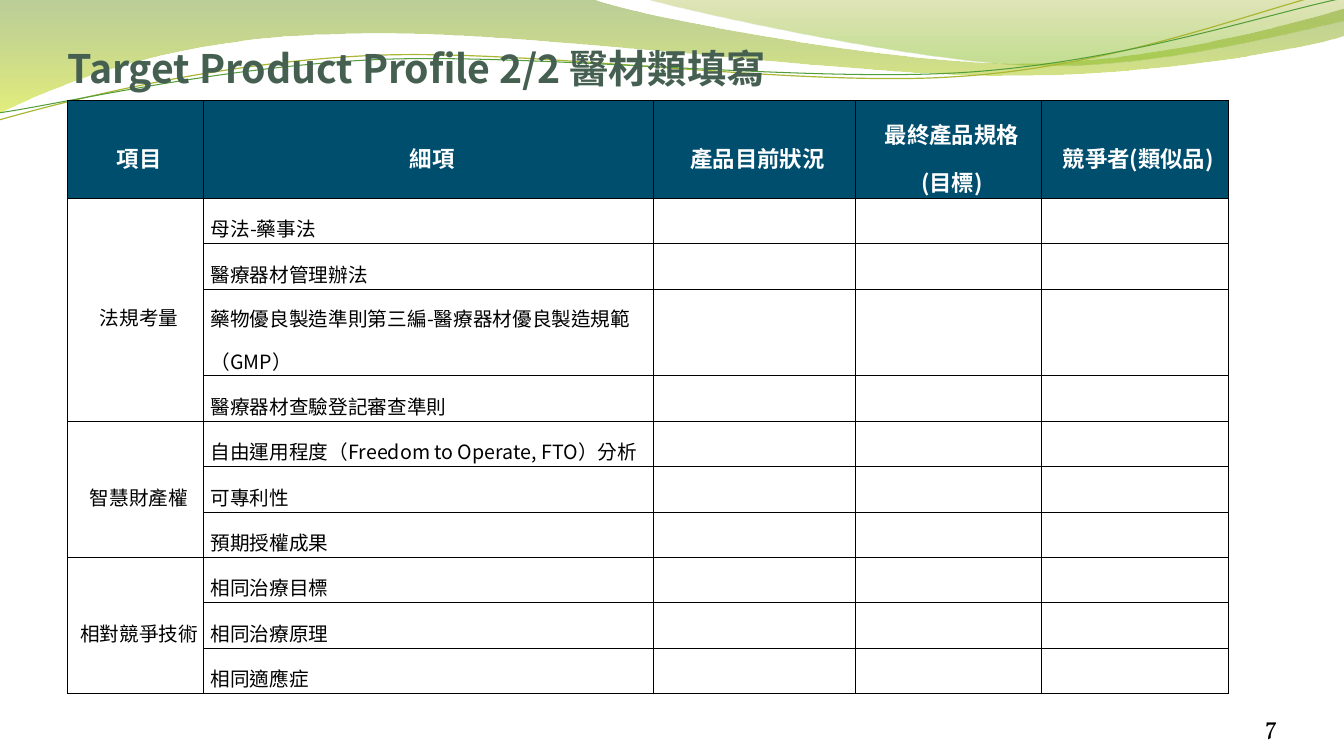
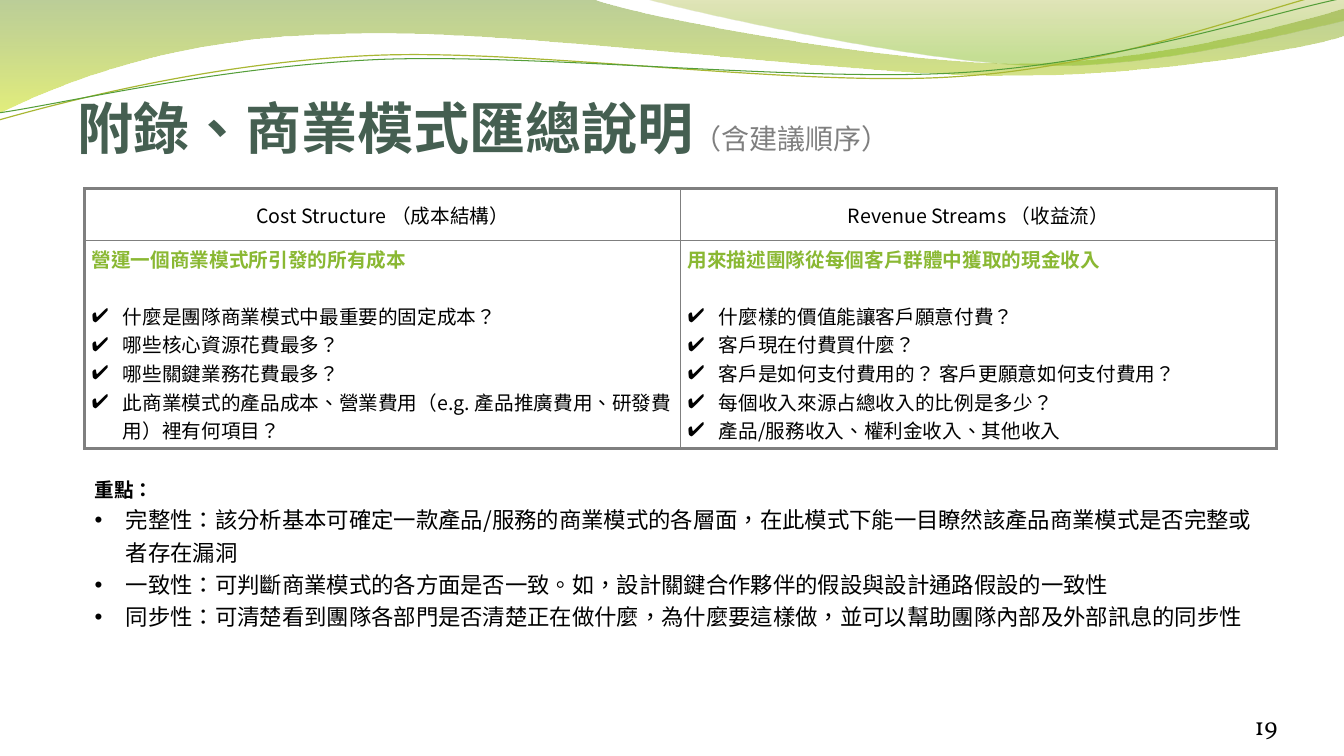
from dataclasses import dataclass

from lxml.etree import SubElement
from pptx import Presentation
from pptx.dml.color import RGBColor
from pptx.enum.text import MSO_ANCHOR, MSO_AUTO_SIZE, PP_ALIGN
from pptx.oxml.ns import qn
from pptx.util import Inches, Pt

TC, SC = "Noto Sans CJK TC", "Noto Sans CJK SC"


@dataclass(frozen=True)
class Theme:
    header: str = "004E6E"
    black: str = "000000"
    gray: str = "7F7F7F"
    styles = {
        "title": (28, SC, "455F51", True),
        "big_tc": (40, TC, "455F51", True),
        "big_sc": (40, SC, "455F51", True),
        "subtitle": (20, SC, "7F7F7F", False),
        "head": (16, TC, "FFFFFF", True),
        "cell": (14, TC, "000000", False),
        "lead": (14, TC, "8AB833", True),
        "label": (14, TC, "000000", True),
        "body": (16, TC, "000000", False),
        "number": (18, "Vollkorn", "000000", False),
    }
    bands = (
        ([(0, 0), (5.87, -0.01), (6.34, 0.17, 8.84, 0.63, 10.11, 0.63),
          (11.37, 0.63, 12.77, 0.26, 13.33, 0.09), (13.34, 0.36),
          (13.11, 0.44, 11.59, 0.76, 9.94, 0.75), (8.29, 0.75, 5.09, 0.28, 3.43, 0.34),
          (1.72, 0.36, 0.61, 0.83, -0.02, 1.13)],
         [(0, "69921C", 45), (1, "CCE10F", 55)]),
        ([(6.38, -0.01), (6.79, 0.11, 9.09, 0.62, 10.25, 0.65),
          (11.4, 0.69, 12.82, 0.32, 13.33, 0.21), (13.33, 0)],
         [(0, "9BAA1A", 30), (0.8, "81BA16", 45)]),
    )
    curves = (
        ([(-0.01, 1.19), (0.63, 1.01, 2.1, 0.62, 3.69, 0.55),
          (5.27, 0.48, 7.89, 0.87, 9.49, 0.76), (11.1, 0.66, 12.51, 0.08, 13.3, -0.1)],
         "A9B733", 0.85),
        ([(-0.01, 1.12), (0.62, 1.03, 2.18, 0.66, 3.77, 0.59),
          (5.37, 0.53, 7.96, 0.82, 9.55, 0.72), (11.14, 0.62, 12.55, 0.14, 13.33, -0.02)],
         "549E39", 0.75),
    )


def assign(obj, values):
    for name, value in values.items():
        setattr(obj, name, value)


def box(left, top, width, height):
    return dict(zip(("left", "top", "width", "height"), map(Inches, (left, top, width, height))))


def insets(left, top, right, bottom):
    names = ("margin_left", "margin_top", "margin_right", "margin_bottom")
    return dict(zip(names, map(Inches, (left, top, right, bottom))))


class Deck:
    """Holds the theme, the presentation and the slide being built."""

    def __init__(self, theme):
        self.theme = theme
        self.prs = Presentation()
        assign(self.prs, {"slide_width": Inches(13.33), "slide_height": Inches(7.5)})
        self.layout = self.prs.slide_layouts[5]
        self.s = None

    def slide(self, number):
        first = self.s is None
        self.s = self.prs.slides.add_slide(self.layout)
        if first:
            self.waves()
        tf = self.text(box(11.56, 6.95, 1.11, 0.4), insets(0, 0, 0, 0), MSO_ANCHOR.BOTTOM)
        self.para(tf.paragraphs[0], [(number, "number")], alignment=PP_ALIGN.RIGHT)

    def waves(self):
        for segments, stops in self.theme.bands:
            sp = self.outline(segments, True)
            sp.line.fill.background()
            sp.fill.gradient()
            sp.fill.gradient_angle = 270
            for stop, (position, color, alpha) in zip(sp.fill.gradient_stops, stops):
                stop.position = position
                stop.color.rgb = RGBColor.from_string(color)
                clr = stop._gs.find(qn("a:srgbClr"))
                SubElement(clr, qn("a:alpha"), val=str(alpha * 1000))
        for segments, color, width in self.theme.curves:
            sp = self.outline(segments, False)
            sp.fill.background()
            sp.line.color.rgb = RGBColor.from_string(color)
            sp.line.width = Pt(width)

    def outline(self, segments, close):
        points = [(Inches(seg[k]), Inches(seg[k + 1]))
                  for seg in segments for k in range(0, len(seg), 2)]
        builder = self.s.shapes.build_freeform(*points[0])
        builder.add_line_segments(points[1:], close=close)
        sp = builder.convert_to_shape()
        sp.shadow.inherit = False
        lines = iter(list(sp.element.iter(qn("a:lnTo"))))
        for seg in segments[1:]:
            first = next(lines)
            if len(seg) == 6:
                first.tag = qn("a:cubicBezTo")
                for line in (next(lines), next(lines)):
                    first.append(line[0])
                    line.getparent().remove(line)
        self.layout.shapes.element.append(sp.element)
        return sp

    def title(self, runs, place, anchor):
        sp = self.s.shapes.title
        assign(sp, place)
        assign(sp.text_frame, {"word_wrap": True, "auto_size": MSO_AUTO_SIZE.NONE,
                               "vertical_anchor": anchor, **insets(0, 0.05, 0, 0)})
        self.para(sp.text_frame.paragraphs[0], runs, alignment=PP_ALIGN.LEFT)

    def text(self, place, margins, anchor):
        tf = self.s.shapes.add_textbox(*place.values()).text_frame
        assign(tf, {"word_wrap": True, "vertical_anchor": anchor, **margins})
        return tf

    def para(self, p, runs, margin=0, bullet=None, **fmt):
        assign(p, fmt)
        pPr = p._p.get_or_add_pPr()
        if margin:
            pPr.set("marL", str(Inches(margin)))
            pPr.set("indent", str(-Inches(margin) if bullet else 0))
        if bullet:
            clr = SubElement(pPr, qn("a:buClr"))
            SubElement(clr, qn("a:srgbClr"), val=self.theme.black)
            SubElement(pPr, qn("a:buFont"), typeface="Arial")
            SubElement(pPr, qn("a:buChar"), char=bullet)
        for text, style in runs:
            size, face, color, bold = self.theme.styles[style]
            r = p.add_run()
            r.text = text
            assign(r.font, {"size": Pt(size), "bold": bold, "name": face})
            r.font.color.rgb = RGBColor.from_string(color)
            rPr = r._r.get_or_add_rPr()
            rPr.set("lang", "zh-TW")
            SubElement(rPr, qn("a:ea"), typeface=face)

    def bullets(self, tf, lead, items, style, mark, gap=0, **fmt):
        self.para(tf.paragraphs[0], [lead])
        for i, item in enumerate(items):
            self.para(tf.add_paragraph(), [(item, style)], 0.31, mark,
                      space_before=Pt(0 if i else gap), **fmt)

    def table(self, left, top, cols, rows, margins, color, inner, outer):
        place = box(left, top, sum(cols), sum(rows))
        tbl = self.s.shapes.add_table(len(rows), len(cols), *place.values()).table
        assign(tbl, {"first_row": False, "horz_banding": False})
        for col, width in zip(tbl.columns, cols):
            col.width = Inches(width)
        for row, height in zip(tbl.rows, rows):
            row.height = Inches(height)
        for i in range(len(rows)):
            for j in range(len(cols)):
                cell = tbl.cell(i, j)
                assign(cell, {"vertical_anchor": MSO_ANCHOR.MIDDLE, **margins})
                cell.fill.background()
                edges = {"L": j == 0, "R": j == len(cols) - 1,
                         "T": i == 0, "B": i == len(rows) - 1}
                self.borders(cell, edges, color, inner, outer)
        return tbl

    def borders(self, cell, edges, color, inner, outer):
        tcPr = cell._tc.get_or_add_tcPr()
        for k, (side, on_edge) in enumerate(edges.items()):
            ln = SubElement(tcPr, qn(f"a:ln{side}"), w=str(Pt(outer if on_edge else inner)))
            SubElement(SubElement(ln, qn("a:solidFill")), qn("a:srgbClr"), val=color)
            tcPr.insert(k, ln)


def profile_slide(d):
    d.slide("7")
    d.title([("Target Product Profile 2/2 醫材類填寫", "title")],
            box(0.67, 0.36, 12, 0.58), MSO_ANCHOR.MIDDLE)
    heads = [["項目"], ["細項"], ["產品目前狀況"], ["最終產品規格", "(目標)"], ["競爭者(類似品)"]]
    groups = {
        "法規考量": ["母法-藥事法", "醫療器材管理辦法",
                 "藥物優良製造準則第三編-醫療器材優良製造規範 （GMP）", "醫療器材查驗登記審查準則"],
        "智慧財產權": ["自由運用程度（Freedom to Operate, FTO）分析", "可專利性", "預期授權成果"],
        "相對競爭技術": ["相同治療目標", "相同治療原理", "相同適應症"],
    }
    rows = [0.97, 0.45, 0.45, 0.86] + [0.45] * 7
    tbl = d.table(0.67, 1, [1.35, 4.46, 2, 1.85, 1.85], rows,
                  insets(0, 0, 0, 0), d.theme.black, 0.75, 0.75)
    fmt = {"margin": 0.07, "line_spacing": 1.5}
    centred = {**fmt, "alignment": PP_ALIGN.CENTER}
    for j, lines in enumerate(heads):
        cell = tbl.cell(0, j)
        cell.fill.solid()
        cell.fill.fore_color.rgb = RGBColor.from_string(d.theme.header)
        tf = cell.text_frame
        for k, line in enumerate(lines):
            p = tf.add_paragraph() if k else tf.paragraphs[0]
            d.para(p, [(line, "head")], **centred)
    top = 1
    for group, details in groups.items():
        cell = tbl.cell(top, 0)
        cell.merge(tbl.cell(top + len(details) - 1, 0))
        d.para(cell.text_frame.paragraphs[0], [(group, "cell")], **centred)
        for i, detail in enumerate(details, top):
            d.para(tbl.cell(i, 1).text_frame.paragraphs[0], [(detail, "cell")], **fmt)
        top += len(details)


def model_slide(d):
    d.slide("19")
    d.title([("附錄", "big_tc"), ("、商業模式匯總說明", "big_sc"), ("（含建議順序）", "subtitle")],
            box(0.77, 0.73, 12, 0.86), MSO_ANCHOR.BOTTOM)
    columns = [
        ("Cost Structure （成本結構）", "營運一個商業模式所引發的所有成本",
         ["什麼是團隊商業模式中最重要的固定成本？", "哪些核心資源花費最多？", "哪些關鍵業務花費最多？",
          "此商業模式的產品成本、營業費用（e.g. 產品推廣費用、研發費用）裡有何項目？"]),
        ("Revenue Streams （收益流）", "用來描述團隊從每個客戶群體中獲取的現金收入",
         ["什麼樣的價值能讓客戶願意付費？", "客戶現在付費買什麼？",
          "客戶是如何支付費用的？ 客戶更願意如何支付費用？", "每個收入來源占總收入的比例是多少？",
          "產品/服務收入、權利金收入、其他收入"]),
    ]
    tbl = d.table(0.84, 1.87, [5.91, 5.91], [0.52, 2.06],
                  insets(0.07, 0.04, 0.07, 0.04), d.theme.gray, 1, 2.25)
    for j, (head, lead, items) in enumerate(columns):
        d.para(tbl.cell(0, j).text_frame.paragraphs[0], [(head, "cell")],
               alignment=PP_ALIGN.CENTER)
        cell = tbl.cell(1, j)
        cell.vertical_anchor = MSO_ANCHOR.TOP
        d.bullets(cell.text_frame, (lead, "lead"), items, "cell", "✔", gap=20)
    tf = d.text(box(0.84, 4.69, 11.81, 1.67), insets(0.1, 0.05, 0.1, 0.05), MSO_ANCHOR.TOP)
    d.bullets(tf, ("重點：", "label"), [
        "完整性：該分析基本可確定一款產品/服務的商業模式的各層面，在此模式下能一目瞭然該產品商業模式是否完整或者存在漏洞",
        "一致性：可判斷商業模式的各方面是否一致。如，設計關鍵合作夥伴的假設與設計通路假設的一致性",
        "同步性：可清楚看到團隊各部門是否清楚正在做什麼，為什麼要這樣做，並可以幫助團隊內部及外部訊息的同步性",
    ], "body", "•", line_spacing=1.2)


def main():
    d = Deck(Theme())
    profile_slide(d)
    model_slide(d)
    d.prs.save("out.pptx")


if __name__ == "__main__":
    main()
